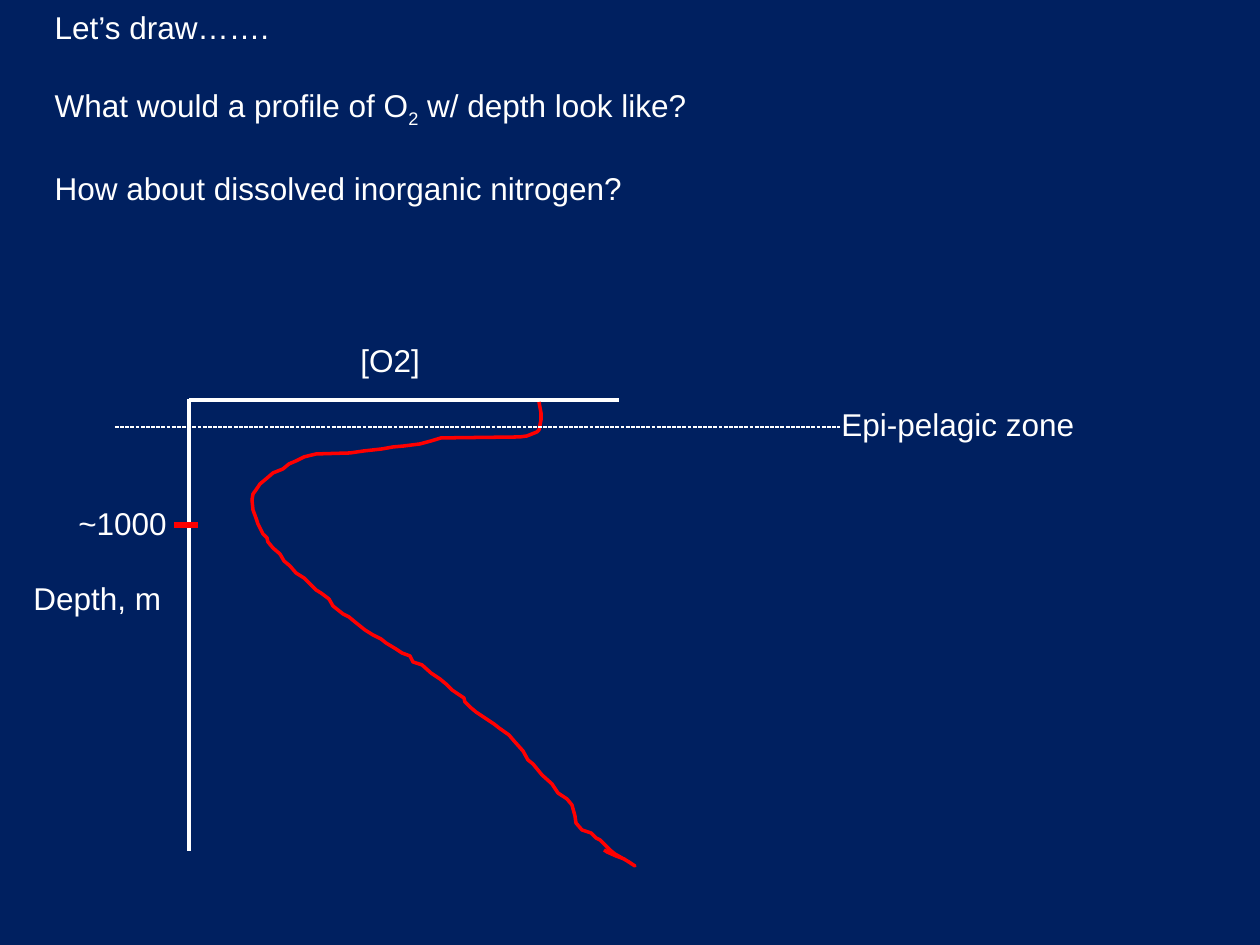
from lxml import etree
from pptx import Presentation
from pptx.dml.color import RGBColor
from pptx.enum.dml import MSO_LINE
from pptx.enum.shapes import MSO_CONNECTOR
from pptx.enum.text import MSO_ANCHOR, MSO_AUTO_SIZE, PP_ALIGN
from pptx.oxml.ns import qn
from pptx.util import Pt

STRAIGHT = MSO_CONNECTOR.STRAIGHT
DASH = MSO_LINE.SQUARE_DOT
TOP = MSO_ANCHOR.TOP
NO_FIT = MSO_AUTO_SIZE.NONE
GROW = MSO_AUTO_SIZE.SHAPE_TO_FIT_TEXT
LEFT = PP_ALIGN.LEFT

EMU_PER_PX = 914400 / 126
NAVY, WHITE, RED = "002060", "FFFFFF", "FF0000"

QUESTIONS = [
    [("Let’s draw…….", False)],
    [("What would a profile of O", False), ("2", True), (" w/ depth look like?", False)],
    [("How about dissolved inorganic nitrogen?", False)],
]
QUESTIONS_BOX = (42, 0, 998, 318)
AXES = [((189, 399), (189, 851)), ((189, 400), (619, 400))]
AXIS_LABELS = [("Depth, m", (21, 573, 155, 50)), ("[O2]", (348, 335, 86, 50))]
DEPTH_MARKS = [
    {"ends": ((115, 427), (840, 427)), "color": WHITE, "width": 0.75, "dash": DASH,
     "label": "Epi-pelagic zone", "box": (829, 399, 270, 50)},
    {"ends": ((174, 525), (198, 525)), "color": RED, "width": 3, "dash": None,
     "label": "~1000", "box": (66, 498, 123, 50)},
]
OXYGEN_PROFILE = [
    (539, 402), (541, 413), (541, 420), (539, 430), (537, 432), (527, 436), (520, 437),
    (441, 438), (431, 441), (420, 444), (404, 446), (393, 447), (382, 449), (364, 451),
    (350, 453), (316, 454), (304, 457), (296, 461), (289, 464), (283, 469), (273, 473),
    (266, 479), (260, 484), (256, 490), (253, 494), (252, 500), (253, 510), (256, 518),
    (258, 524), (263, 534), (267, 538), (268, 542), (273, 548), (280, 554), (284, 561),
    (290, 566), (296, 573), (304, 578), (309, 583), (316, 590), (321, 593), (329, 599),
    (333, 606), (343, 614), (349, 617), (355, 622), (365, 630), (373, 635), (381, 639),
    (386, 643), (396, 649), (402, 653), (410, 656), (413, 662), (422, 665), (431, 673),
    (440, 679), (446, 684), (452, 690), (455, 692), (464, 698), (465, 702), (470, 707),
    (476, 712), (494, 724), (499, 728), (509, 735), (515, 742), (523, 751), (528, 760),
    (533, 764), (542, 775), (552, 784), (558, 793), (567, 799), (572, 805), (575, 816),
    (576, 823), (582, 830), (591, 833), (596, 838), (600, 840), (610, 850), (615, 854),
    (629, 862), (635, 866), (624, 859), (616, 856), (607, 852), (604, 850),
]


def px(length):
    return round(length * EMU_PER_PX)


def rgb(color):
    return RGBColor.from_string(color)


def set_all(target, values):
    for key, value in values.items():
        setattr(target, key, value)


def place(shape, box):
    set_all(shape, dict(zip(("left", "top", "width", "height"), map(px, box))))


def write(paragraph, text, subscript=False):
    run = paragraph.add_run()
    run.text = text
    set_all(run.font, {"name": "Arial", "size": Pt(18)})
    run.font.color.rgb = rgb(WHITE)
    if subscript:
        run.font._element.set("baseline", "-25000")


def style_line(line, color, width, dash=None):
    line.color.rgb = rgb(color)
    line.width = Pt(width)
    if dash:
        line.dash_style = dash


def add_line(parent, ends, color, width, dash=None):
    start, end = ends
    connector = parent.add_connector(STRAIGHT, *map(px, start + end))
    style_line(connector.line, color, width, dash)
    etree.SubElement(connector._element.spPr, qn("a:effectLst"))


def add_label(parent, text, box):
    label = parent.add_textbox(*map(px, box))
    set_all(label.text_frame, {"word_wrap": False, "auto_size": GROW})
    write(label.text_frame.paragraphs[0], text)


def fill_questions(body):
    place(body, QUESTIONS_BOX)
    frame = body.text_frame
    set_all(frame, {"word_wrap": True, "auto_size": NO_FIT,
                    "vertical_anchor": TOP, "margin_top": px(8)})
    for index, runs in enumerate(QUESTIONS):
        paragraph = frame.add_paragraph() if index else frame.paragraphs[0]
        set_all(paragraph, {"alignment": LEFT, "line_spacing": 1.0,
                            "space_before": Pt(23 if index else 0), "space_after": Pt(0)})
        properties = paragraph._p.get_or_add_pPr()
        properties.set("marL", "0")
        properties.set("indent", "0")
        etree.SubElement(properties, qn("a:buNone"))
        for text, subscript in runs:
            write(paragraph, text, subscript)


def main():
    deck = Presentation()
    set_all(deck, {"slide_width": px(1260), "slide_height": px(945)})
    slide = deck.slides.add_slide(deck.slide_layouts[1])
    slide.background.fill.solid()
    slide.background.fill.fore_color.rgb = rgb(NAVY)
    shapes = slide.shapes
    title = shapes.title._element
    title.getparent().remove(title)
    fill_questions(slide.placeholders[1])

    for ends in AXES:
        add_line(shapes, ends, WHITE, 2)

    builder = shapes.build_freeform(*OXYGEN_PROFILE[0], scale=EMU_PER_PX)
    builder.add_line_segments(OXYGEN_PROFILE[1:], close=False)
    profile = builder.convert_to_shape()
    profile.shadow.inherit = False
    profile.fill.background()
    style_line(profile.line, RED, 2)

    for text, box in AXIS_LABELS:
        add_label(shapes, text, box)
    for mark in DEPTH_MARKS:
        group = shapes.add_group_shape().shapes
        add_line(group, mark["ends"], mark["color"], mark["width"], mark["dash"])
        add_label(group, mark["label"], mark["box"])

    deck.save("out.pptx")


if __name__ == "__main__":
    main()
